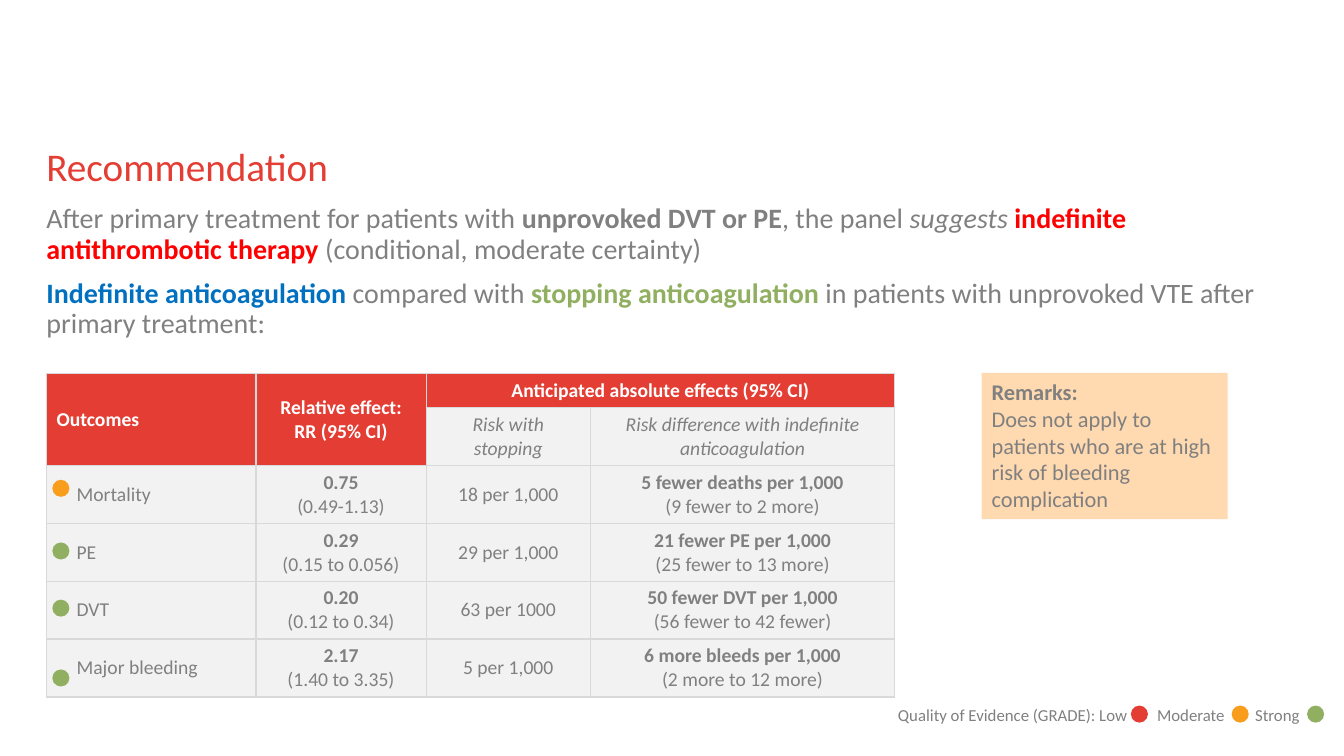
"""Build a slide on indefinite antithrombotic therapy after unprovoked DVT or PE."""
from lxml.etree import SubElement
from pptx import Presentation
from pptx.dml.color import RGBColor
from pptx.enum.shapes import MSO_SHAPE
from pptx.enum.text import MSO_ANCHOR, PP_ALIGN
from pptx.oxml.ns import qn
from pptx.util import Cm, Pt

FONT = "Calibri"
RED = RGBColor(0xE4, 0x3D, 0x33)
BRIGHT = RGBColor(0xFF, 0x00, 0x00)
BLUE = RGBColor(0x00, 0x70, 0xC0)
GREEN = RGBColor(0x91, 0xAF, 0x60)
AMBER = RGBColor(0xF9, 0x9D, 0x1C)
PEACH = RGBColor(0xFF, 0xD9, 0xB0)
GREY = RGBColor(0x80, 0x80, 0x80)
PALE = RGBColor(0xF2, 0xF2, 0xF2)
EDGE = RGBColor(0xD9, 0xD9, 0xD9)
WHITE = RGBColor(0xFF, 0xFF, 0xFF)

TITLE = "Recommendation"
BODY = [
    [("After primary treatment for patients with ", {}),
     ("unprovoked DVT or PE", {"bold": True}),
     (", the panel ", {}),
     ("suggests ", {"italic": True}),
     ("indefinite antithrombotic therapy ", {"bold": True, "color": BRIGHT}),
     ("(conditional, moderate certainty)", {})],
    [("Indefinite anticoagulation ", {"bold": True, "color": BLUE}),
     ("compared with ", {}),
     ("stopping anticoagulation ", {"bold": True, "color": GREEN}),
     ("in patients with unprovoked VTE after primary treatment:", {})],
]
HEADS = [["Outcomes"], ["Relative effect:", "RR (95% CI)"],
         ["Anticipated absolute effects (95% CI)"]]
SUBS = ["Risk with stopping", "Risk difference with indefinite anticoagulation"]
ROWS = [
    ("Mortality", ["0.75", "(0.49-1.13)"], "18 per 1,000",
     ["5 fewer deaths per 1,000", "(9 fewer to 2 more)"]),
    ("PE", ["0.29", "(0.15 to 0.056)"], "29 per 1,000",
     ["21 fewer PE per 1,000", "(25 fewer to 13 more)"]),
    ("DVT", ["0.20", "(0.12 to 0.34)"], "63 per 1000",
     ["50 fewer DVT per 1,000", "(56 fewer to 42 fewer)"]),
    ("Major bleeding", ["2.17", "(1.40 to 3.35)"], "5 per 1,000",
     ["6 more bleeds per 1,000", "(2 more to 12 more)"]),
]
REMARKS = ["Remarks:",
           "Does not apply to patients who are at high risk of bleeding complication"]
LEGEND = "Quality of Evidence (GRADE): Low\tModerate\tStrong"
TABS = [6.53, 9.0]
DOTS = [(28.5, 17.78, RED), (31.04, 17.78, AMBER), (32.94, 17.78, GREEN),
        (1.32, 12.09, AMBER), (1.32, 13.67, GREEN),
        (1.32, 15.11, GREEN), (1.32, 16.87, GREEN)]
LEFT = 1.17
WIDE = 30.48
COLS = [5.28, 4.29, 4.14, 7.67]
TALL = [0.84] + [1.44] * 5


def style(run, size, color=GREY, bold=False, italic=False):
    font = run.font
    font.name, font.size = FONT, Pt(size)
    font.bold, font.italic = bold, italic
    font.color.rgb = color


def write(frame, lines, size, color=GREY, bold=(), italic=False, align=PP_ALIGN.LEFT):
    frame.text = "\n".join(lines)
    for i, para in enumerate(frame.paragraphs):
        para.alignment = align
        for run in para.runs:
            style(run, size, color, i in bold, italic)


def add_box(slide, x, y, w, h, inset=True):
    frame = slide.shapes.add_textbox(Cm(x), Cm(y), Cm(w), Cm(h)).text_frame
    frame.word_wrap = True
    if not inset:
        frame.margin_left = frame.margin_right = 0
        frame.margin_top = frame.margin_bottom = 0
    return frame


def add_form(slide, kind, x, y, w, h, color):
    form = slide.shapes.add_shape(kind, Cm(x), Cm(y), Cm(w), Cm(h))
    form.shadow.inherit = False
    form.fill.solid()
    form.fill.fore_color.rgb = color
    form.line.fill.background()
    return form


def paint(cell, color):
    props = cell._tc.get_or_add_tcPr()
    for side in ("lnL", "lnR", "lnT", "lnB"):
        line = SubElement(props, qn("a:" + side), w=str(Pt(1)))
        SubElement(SubElement(line, qn("a:solidFill")), qn("a:srgbClr"), val=str(EDGE))
    cell.fill.solid()
    cell.fill.fore_color.rgb = color
    cell.vertical_anchor = MSO_ANCHOR.MIDDLE


def add_grid(slide):
    grid = slide.shapes.add_table(len(TALL), len(COLS), Cm(LEFT), Cm(9.42),
                                  Cm(sum(COLS)), Cm(sum(TALL))).table
    grid.horz_banding = False
    for col, wide in zip(grid.columns, COLS):
        col.width = Cm(wide)
    for row, tall in zip(grid.rows, TALL):
        row.height = Cm(tall)
    for r in range(len(TALL)):
        for c in range(len(COLS)):
            paint(grid.cell(r, c), RED if r == 0 or (r == 1 and c < 2) else PALE)
    for c in (0, 1):
        grid.cell(0, c).merge(grid.cell(1, c))
    grid.cell(0, 2).merge(grid.cell(0, 3))

    mid = PP_ALIGN.CENTER
    for c, lines in enumerate(HEADS):
        write(grid.cell(0, c).text_frame, lines, 14, WHITE, (0, 1),
              align=mid if c else PP_ALIGN.LEFT)
    for c, text in enumerate(SUBS, 2):
        write(grid.cell(1, c).text_frame, [text], 14, italic=True, align=mid)
    for r, (name, ratio, risk, gap) in enumerate(ROWS, 2):
        first = grid.cell(r, 0)
        first.margin_left = Cm(0.76)
        write(first.text_frame, [name], 14)
        write(grid.cell(r, 1).text_frame, ratio, 14, bold=(0,), align=mid)
        write(grid.cell(r, 2).text_frame, [risk], 14, align=mid)
        write(grid.cell(r, 3).text_frame, gap, 14, bold=(0,), align=mid)


def main():
    deck = Presentation()
    deck.slide_width, deck.slide_height = Cm(33.87), Cm(19.05)
    slide = deck.slides.add_slide(deck.slide_layouts[6])
    add_grid(slide)

    title = add_box(slide, LEFT, 3.73, WIDE, 1.17, inset=False)
    write(title, [TITLE], 28, RED)
    title.paragraphs[0].line_spacing = 0.9

    body = add_box(slide, LEFT, 5.16, WIDE, 3.9, inset=False)
    for i, parts in enumerate(BODY):
        para = body.add_paragraph() if i else body.paragraphs[0]
        para.line_spacing = 0.9
        para.space_before = Pt(10 if i else 0)
        for text, look in parts:
            run = para.add_run()
            run.text = text
            style(run, 20, **look)

    legend = add_box(slide, 22.38, 17.63, 11.49, 0.76)
    write(legend, [LEGEND], 12)
    stops = SubElement(legend.paragraphs[0]._p.get_or_add_pPr(), qn("a:tabLst"))
    for stop in TABS:
        SubElement(stops, qn("a:tab"), pos=str(Cm(stop)), algn="l")

    for x, y, color in DOTS:
        add_form(slide, MSO_SHAPE.OVAL, x, y, 0.43, 0.43, color)

    note = add_form(slide, MSO_SHAPE.RECTANGLE, 24.74, 9.4, 6.2, 3.68, PEACH).text_frame
    note.word_wrap = True
    note.vertical_anchor = MSO_ANCHOR.TOP
    write(note, REMARKS, 16, bold=(0,))
    deck.save("out.pptx")


if __name__ == "__main__":
    main()
